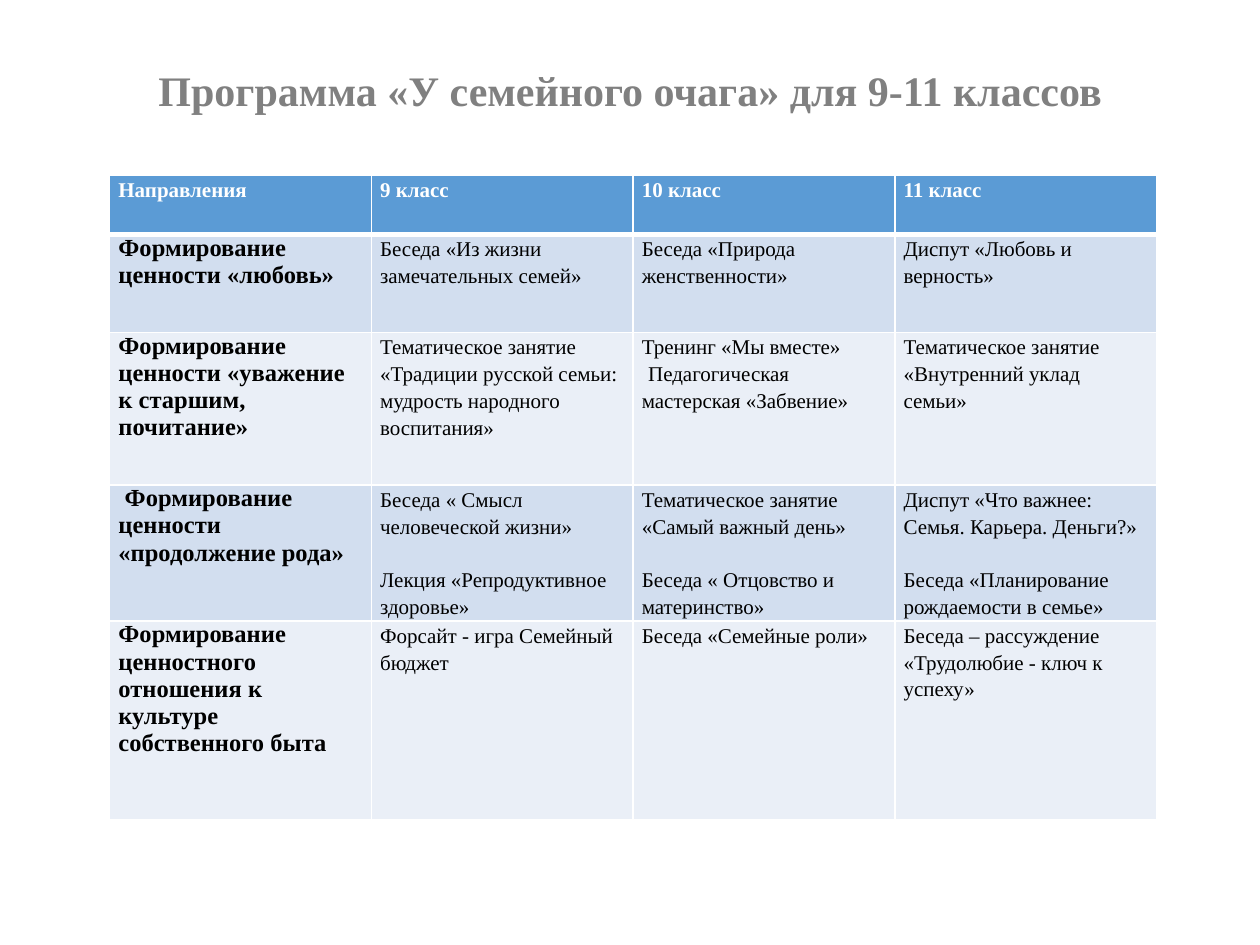
from lxml import etree
from pptx import Presentation
from pptx.dml.color import RGBColor
from pptx.enum import text
from pptx.oxml.ns import qn
from pptx.util import Inches, Pt

FONT = "Times New Roman"
WHITE = RGBColor(0xFF, 0xFF, 0xFF)
BLACK = RGBColor(0x00, 0x00, 0x00)
TITLE_GREY = RGBColor(0x80, 0x80, 0x80)
HEADER_BLUE = RGBColor(0x5B, 0x9B, 0xD5)
BANDS = [RGBColor(0xD2, 0xDE, 0xEF), RGBColor(0xEA, 0xEF, 0xF7)]

ROW_HEIGHTS = [0.47, 0.78, 1.21, 1.08, 1.58]
TOPIC_GAP = Pt(15.4)  # one body line between topics
LEAD_INDENT = Inches(0.05)

# One line break starts a paragraph, two start a new topic,
# and a leading space asks for a small first-line indent
PROGRAMME = [
    ["Направления", "9 класс", "10 класс", "11 класс"],
    ["Формирование ценности «любовь»",
     "Беседа «Из жизни замечательных семей»",
     "Беседа «Природа женственности»",
     "Диспут «Любовь и верность»"],
    ["Формирование ценности «уважение к старшим, почитание»",
     "Тематическое занятие «Традиции русской семьи: мудрость народного воспитания»",
     "Тренинг «Мы вместе»\n Педагогическая мастерская «Забвение»",
     "Тематическое занятие «Внутренний уклад семьи»"],
    [" Формирование ценности «продолжение рода»",
     "Беседа « Смысл человеческой жизни»\n\nЛекция «Репродуктивное здоровье»",
     "Тематическое занятие\n«Самый важный день»\n\nБеседа « Отцовство и материнство»",
     "Диспут «Что важнее: Семья. Карьера. Деньги?»\n\n"
     "Беседа «Планирование рождаемости в семье»"],
    ["Формирование ценностного отношения к культуре собственного быта",
     "Форсайт - игра Семейный бюджет",
     "Беседа «Семейные роли»",
     "Беседа – рассуждение\n«Трудолюбие - ключ к успеху»"],
]


def style_font(font, size, color, bold):
    font.name = FONT
    font.size = Pt(size)
    font.bold = bold
    font.color.rgb = color


def add_title(slide, left, top, width, height):
    frame = slide.shapes.add_textbox(left, top, width, height).text_frame
    frame.word_wrap = True
    frame.vertical_anchor = text.MSO_ANCHOR.MIDDLE
    frame.text = "Программа «У семейного очага» для 9-11 классов"
    heading = frame.paragraphs[0]
    heading.alignment = text.PP_ALIGN.CENTER
    heading.line_spacing = 0.9
    style_font(heading.runs[0].font, 24, TITLE_GREY, True)


def set_borders(cell, top, bottom):
    """White cell edges; top and bottom widths in points."""
    properties = cell._tc.get_or_add_tcPr()
    for side, width in (("L", 1), ("R", 1), ("T", top), ("B", bottom)):
        line = etree.SubElement(properties, qn(f"a:ln{side}"), w=str(Pt(width)))
        fill = etree.SubElement(line, qn("a:solidFill"))
        etree.SubElement(fill, qn("a:srgbClr"), val=str(WHITE))


def fill_cell(cell, content, size, color, bold, spacing):
    cell.margin_left = cell.margin_right = Inches(0.07)
    cell.margin_top = cell.margin_bottom = 0
    frame = cell.text_frame
    paragraph = None
    for topic_index, topic in enumerate(content.split("\n\n")):
        for line_index, line in enumerate(topic.split("\n")):
            paragraph = frame.add_paragraph() if paragraph else frame.paragraphs[0]
            paragraph.text = line.strip()
            if spacing:
                paragraph.line_spacing = spacing
            if topic_index and line_index == 0:
                paragraph.space_before = TOPIC_GAP
            if line.startswith(" "):
                paragraph._p.get_or_add_pPr().set("indent", str(LEAD_INDENT))
            style_font(paragraph.runs[0].font, size, color, bold)


def add_programme_table(slide, left, top, width):
    table = slide.shapes.add_table(
        len(PROGRAMME), len(PROGRAMME[0]), left, top, width,
        Inches(sum(ROW_HEIGHTS))).table
    for r, (row, height) in enumerate(zip(PROGRAMME, ROW_HEIGHTS)):
        table.rows[r].height = Inches(height)
        header = r == 0
        for c, content in enumerate(row):
            cell = table.cell(r, c)
            # The header is set off by a thicker rule
            set_borders(cell, top=3 if r == 1 else 1, bottom=3 if header else 1)
            cell.fill.solid()
            cell.fill.fore_color.rgb = HEADER_BLUE if header else BANDS[(r - 1) % 2]
            direction = c == 0 and not header
            fill_cell(cell, content,
                      size=14 if direction else 12,
                      color=WHITE if header else BLACK,
                      bold=header or direction,
                      spacing=None if direction else 1.15)


def main():
    deck = Presentation()
    deck.slide_width, deck.slide_height = Inches(10), Inches(7.5)
    slide = deck.slides.add_slide(deck.slide_layouts[6])
    add_programme_table(slide, Inches(0.87), Inches(1.39), Inches(8.31))
    add_title(slide, Inches(0.69), Inches(0.4), Inches(8.62), Inches(0.67))
    deck.save("out.pptx")


if __name__ == "__main__":
    main()
